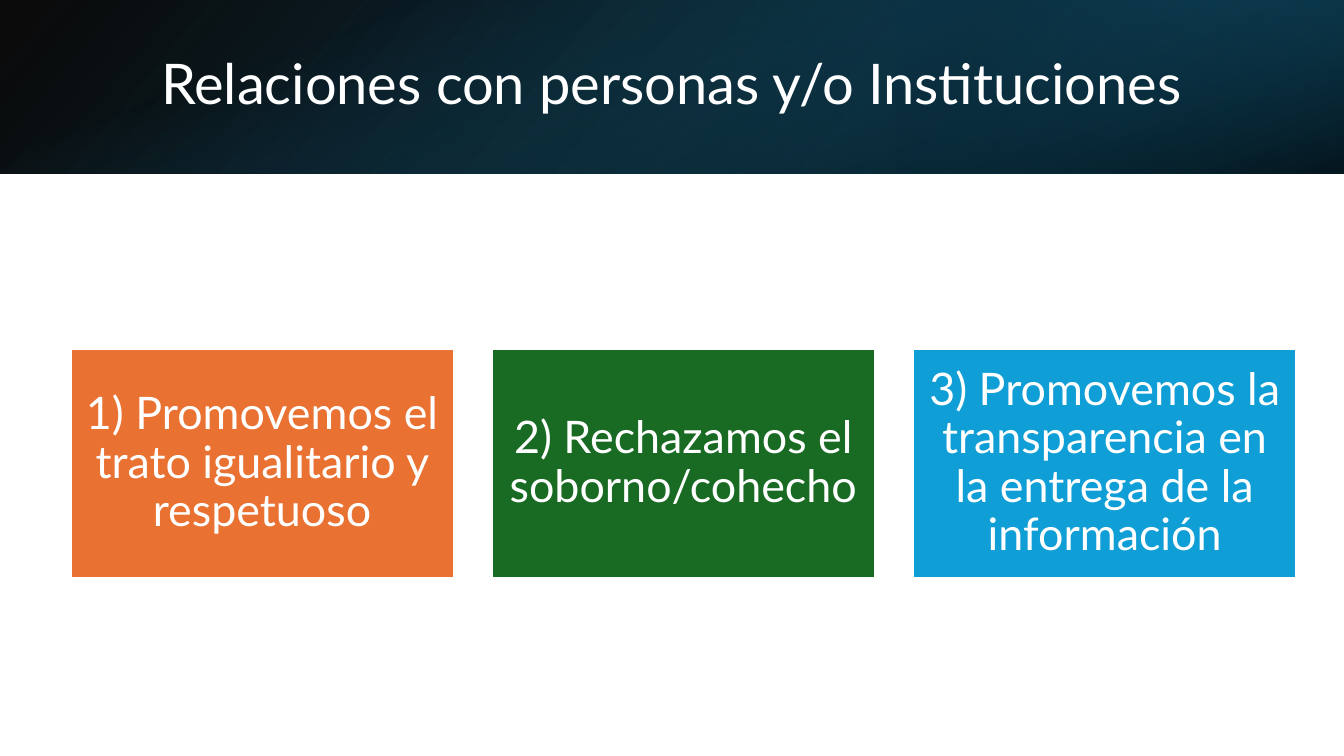
from lxml.etree import SubElement
from pptx import Presentation
from pptx.dml.color import RGBColor
from pptx.enum.shapes import MSO_SHAPE
from pptx.enum.text import MSO_ANCHOR, PP_ALIGN
from pptx.oxml.ns import qn
from pptx.util import Inches, Pt

WHITE = RGBColor(0xFF, 0xFF, 0xFF)
BLACK = RGBColor(0x00, 0x00, 0x00)
NAVY = RGBColor(0x0B, 0x30, 0x41)
DEEP = RGBColor(0x10, 0x48, 0x62)
TEAL = RGBColor(0x15, 0x60, 0x82)
ORANGE = RGBColor(0xE9, 0x71, 0x32)
GREEN = RGBColor(0x19, 0x6B, 0x24)
BLUE = RGBColor(0x0F, 0x9E, 0xD5)

CARDS = [
    ("1) Promovemos el trato igualitario y respetuoso", ORANGE),
    ("2) Rechazamos el soborno/cohecho", GREEN),
    ("3) Promovemos la transparencia en la entrega de la información", BLUE),
]
BAND = 22.93
LEFT, TOP, WIDE, HIGH, STEP = 5.25, 46.13, 28.5, 30.4, 31.35


class Deck:
    """Places elements on a grid of 100 columns by 100 rows."""

    font = "Lato"

    def __init__(self):
        self.prs = Presentation()
        self.prs.slide_width = Inches(13.33)
        self.prs.slide_height = Inches(7.5)
        self.slide = self.prs.slides.add_slide(self.prs.slide_layouts[6])

    def area(self, x, y, w, h):
        col = self.prs.slide_width / 100
        row = self.prs.slide_height / 100
        return int(x * col), int(y * row), int(w * col), int(h * row)

    def rect(self, x, y, w, h):
        box = self.area(x, y, w, h)
        shape = self.slide.shapes.add_shape(MSO_SHAPE.RECTANGLE, *box)
        shape.shadow.inherit = False
        return shape

    def glow(self, x, w, stops, angle, turn=0, flip=False):
        """Add a see-through gradient layer to the top band."""
        shape = self.rect(x, 0, w, BAND)
        shape.line.fill.background()
        if turn == 90:
            wide, high = shape.width, shape.height
            shape.left, shape.top = (wide - high) // 2, (high - wide) // 2
            shape.width, shape.height = high, wide
        shape.rotation = turn
        props = shape.element.spPr
        if flip:
            props.find(qn("a:xfrm")).set("flipH", "1")
        shape.fill.gradient()
        grad = props.find(qn("a:gradFill"))
        for child in list(grad):
            grad.remove(child)
        marks = SubElement(grad, qn("a:gsLst"))
        for place, color, alpha in stops:
            mark = SubElement(marks, qn("a:gs"), pos=str(place * 1000))
            tone = SubElement(mark, qn("a:srgbClr"), val=str(color))
            SubElement(tone, qn("a:alpha"), val=str(alpha * 1000))
        SubElement(grad, qn("a:lin"), ang=str(angle * 60000), scaled="0")

    def label(self, shape, text, size, align):
        frame = shape.text_frame
        frame.word_wrap = True
        frame.vertical_anchor = MSO_ANCHOR.MIDDLE
        para = frame.paragraphs[0]
        para.text = text
        para.alignment = align
        para.line_spacing = 0.9
        para.font.name = self.font
        para.font.size = Pt(size)
        para.font.color.rgb = WHITE
        return frame

    def title(self, text, x, y, w, h):
        box = self.slide.shapes.add_textbox(*self.area(x, y, w, h))
        self.label(box, text, 40, PP_ALIGN.LEFT)

    def card(self, text, color, x, y, w, h):
        shape = self.rect(x, y, w, h)
        shape.fill.solid()
        shape.fill.fore_color.rgb = color
        shape.line.color.rgb = WHITE
        shape.line.width = Pt(1.5)
        frame = self.label(shape, text, 32, PP_ALIGN.CENTER)
        frame.margin_left = frame.margin_right = Inches(0.13)
        frame.margin_top = frame.margin_bottom = Inches(0.13)


def main():
    deck = Deck()
    deck.glow(0, 100, [(0, BLACK, 96), (100, DEEP, 100)], 140, flip=True)
    deck.glow(66.67, 33.33, [(19, NAVY, 68), (100, TEAL, 79)], 320, 180, True)
    deck.glow(0, 100, [(23, TEAL, 0), (99, BLACK, 74)], 340, 90)
    deck.title("Relaciones con personas y/o Instituciones", 11.25, 5.07, 82.37, 12.8)
    for i, (text, color) in enumerate(CARDS):
        deck.card(text, color, LEFT + i * STEP, TOP, WIDE, HIGH)
    deck.prs.save("out.pptx")


if __name__ == "__main__":
    main()
